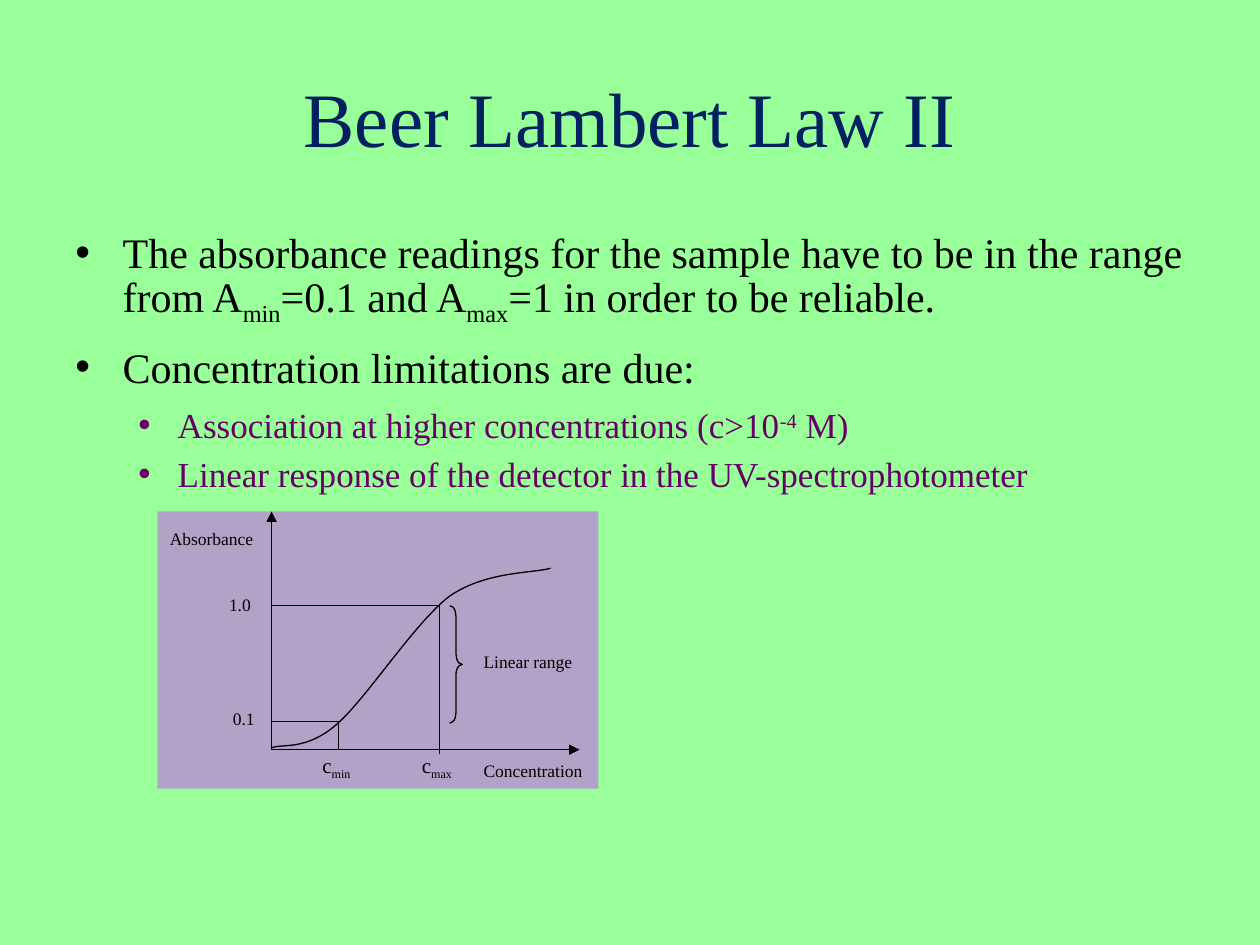
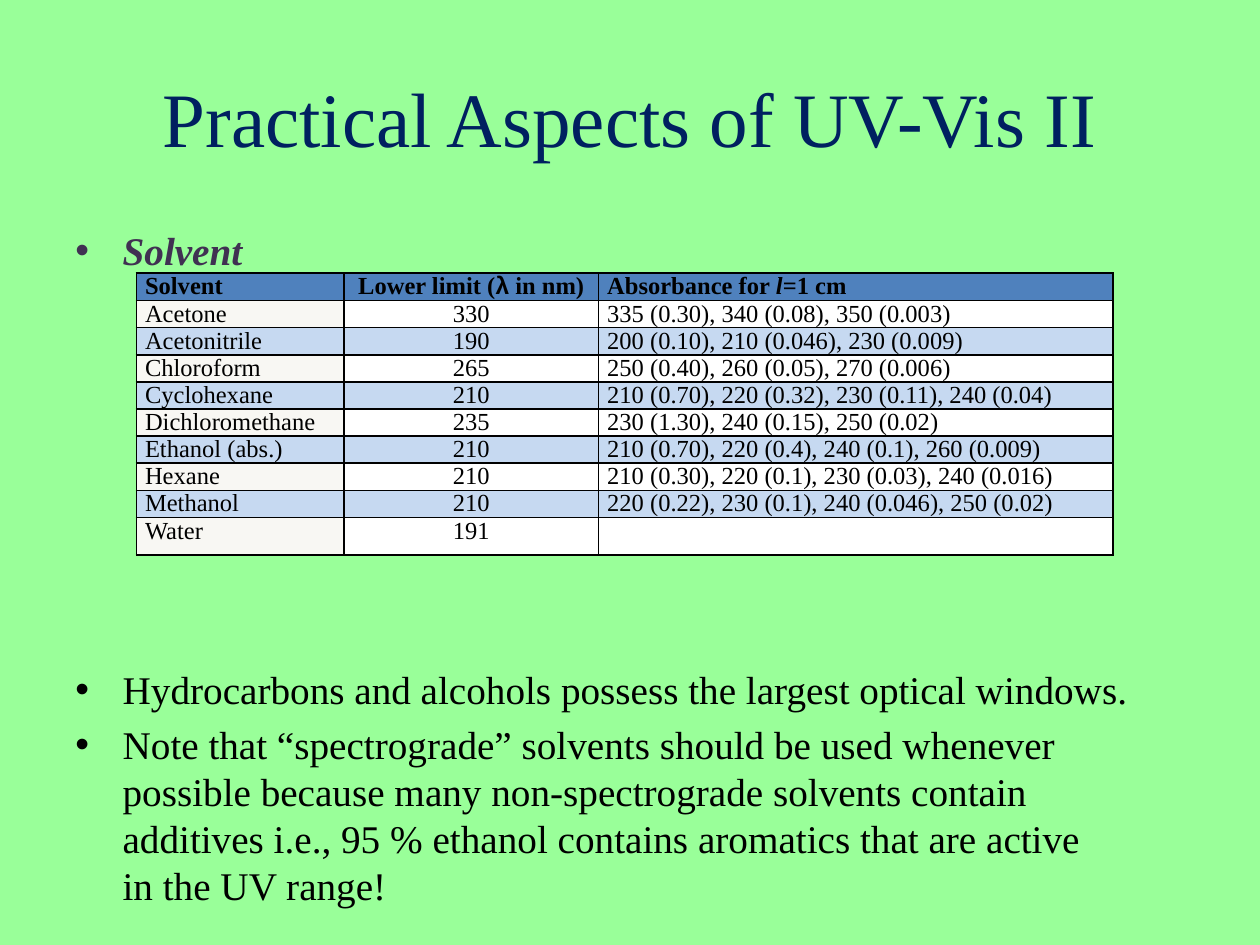
from lxml import etree
from pptx import Presentation
from pptx.dml.color import RGBColor
from pptx.enum.shapes import MSO_CONNECTOR, MSO_SHAPE
from pptx.enum.text import MSO_ANCHOR, PP_ALIGN
from pptx.oxml.ns import qn
from pptx.util import Pt

LEFT, CENTER = PP_ALIGN.LEFT, PP_ALIGN.CENTER
TOP, MIDDLE = MSO_ANCHOR.TOP, MSO_ANCHOR.MIDDLE
STRAIGHT = MSO_CONNECTOR.STRAIGHT
RECTANGLE, RIGHT_BRACE = MSO_SHAPE.RECTANGLE, MSO_SHAPE.RIGHT_BRACE

GREEN = RGBColor(0x99, 0xFF, 0x99)
NAVY = RGBColor(0x00, 0x20, 0x60)
BLACK = RGBColor(0x00, 0x00, 0x00)
PURPLE = RGBColor(0x66, 0x00, 0x66)
DARK_VIOLET = RGBColor(0x40, 0x31, 0x52)
LILAC = RGBColor(0xB3, 0xA2, 0xC7)
HEADER_BLUE = RGBColor(0x4F, 0x81, 0xBD)
BAND_BLUE = RGBColor(0xC6, 0xD9, 0xF1)
OFF_WHITE = RGBColor(0xF8, 0xF7, 0xF3)
WHITE = RGBColor(0xFF, 0xFF, 0xFF)

SERIF = "Times New Roman"
LINE_RATIO = 1.2
LINE_WIDTH = 0.75
TITLE_BOX = (36, 21.6, 648, 90)
BODY_BOX = (36, 126, 648, 356.4)
INDENTS = [(27, -27), (58.5, -22.5)]
SUB, SUP = {"baseline": -25}, {"baseline": 30}

LAW_TITLE = "Beer Lambert Law II"
LAW_POINTS = [
    {"runs": [("The absorbance readings for the sample have to be in the range from A", {}),
              ("min", SUB), ("=0.1 and A", {}), ("max", SUB),
              ("=1 in order to be reliable.", {})], "size": 24},
    {"runs": [("Concentration limitations are due:", {})], "size": 24, "before": 7.8},
    {"runs": [("Association at higher concentrations (c>10", {}), ("-4", SUP), (" M)", {})],
     "size": 20, "color": PURPLE, "level": 1, "before": 6.9},
    {"runs": [("Linear response of the detector in the UV-spectrophotometer", {})],
     "size": 20, "color": PURPLE, "level": 1, "before": 4},
]

GRAPH_PANEL = (90, 292.3, 252, 158.4)
ORIGIN_X, ORIGIN_Y = 155.2, 428.4
C_MIN, C_MAX = 193.4, 251.2
A_MIN, A_MAX = 412.2, 346.1
AXES = [((ORIGIN_X, ORIGIN_Y), (ORIGIN_X, 292.3)), ((ORIGIN_X, ORIGIN_Y), (331.2, ORIGIN_Y))]
GUIDES = [
    ((ORIGIN_X, A_MIN), (C_MIN, A_MIN)),
    ((C_MIN, A_MIN), (C_MIN, ORIGIN_Y)),
    ((C_MAX, A_MAX), (ORIGIN_X, A_MAX)),
    ((C_MAX, A_MAX), (C_MAX, 430.6)),
]
CURVE_START = (154.8, 427.4)
CURVE_SEGMENTS = [
    ((161.3, 424.8), (174.2, 429.1), (191.5, 414.7)),
    ((208.8, 400.3), (236.9, 355.7), (257, 340.6)),
    ((277.9, 326.2), (305.3, 327.6), (314.6, 324.7)),
]
CURVE_STEPS = 24
BRACE_BOX = (257, A_MAX, 7.2, A_MIN - A_MAX + 1)
GRAPH_LABELS = [
    ([("Linear range", {})], 10, (269.3, 368.6, 67.7, 22.3)),
    ([("Concentration", {})], 10, (269.3, 430.6, 72, 19.4)),
    ([("Absorbance", {})], 10, (90, 298.1, 63.4, 19.4)),
    ([("0.1", {})], 10, (126, 401, 27.4, 19.4)),
    ([("1.0", {})], 10, (123.8, 336.2, 27.4, 19.4)),
    ([("c", {}), ("min", SUB)], 12, (177.1, 428.4, 32.4, 21.6)),
    ([("c", {}), ("max", SUB)], 12, (234, 428.4, 33.8, 21.6)),
]

PRACTICE_TITLE = "Practical Aspects of UV-Vis II"
PRACTICE_POINTS = [
    {"runs": [("Solvent", {"bold": True, "italic": True})], "size": 22.4, "color": DARK_VIOLET},
    {"runs": [("Hydrocarbons and alcohols possess the largest optical windows.", {})],
     "size": 22.4, "before": 224},
    {"runs": [("Note that “spectrograde” solvents should be used whenever\n"
               "possible because many non-spectrograde solvents contain\n"
               "additives i.e., 95 % ethanol contains aromatics that are active\n"
               "in the UV range!", {})], "size": 22.4, "before": 4.5},
]
TABLE_LEFT, TABLE_TOP = 77.9, 156
COLUMN_WIDTHS = [118.7, 145.4, 294]
COLUMN_ALIGNMENTS = [LEFT, CENTER, LEFT]
HEADER_HEIGHT, ROW_HEIGHT = 15.84, 15.48
BOLD = {"bold": True}
TABLE_HEADER = [
    [("Solvent", BOLD)],
    [("Lower limit (", BOLD), ("λ", {"bold": True, "name": "Arial"}), (" in nm)", BOLD)],
    [("Absorbance for ", BOLD), ("l", {"bold": True, "italic": True}), ("=1 cm", BOLD)],
]
SOLVENTS = [
    ("Acetone", "330", "335 (0.30), 340 (0.08), 350 (0.003)"),
    ("Acetonitrile", "190", "200 (0.10), 210 (0.046), 230 (0.009)"),
    ("Chloroform", "265", "250 (0.40), 260 (0.05), 270 (0.006)"),
    ("Cyclohexane", "210", "210 (0.70), 220 (0.32), 230 (0.11), 240 (0.04)"),
    ("Dichloromethane", "235", "230 (1.30), 240 (0.15), 250 (0.02)"),
    ("Ethanol (abs.)", "210", "210 (0.70), 220 (0.4), 240 (0.1), 260 (0.009)"),
    ("Hexane", "210", "210 (0.30), 220 (0.1), 230 (0.03), 240 (0.016)"),
    ("Methanol", "210", "220 (0.22), 230 (0.1), 240 (0.046), 250 (0.02)"),
    ("Water", "191", ""),
]


def points(values):
    return [Pt(value) for value in values]


def write_runs(paragraph, runs, size, color=BLACK):
    for text, changes in runs:
        for index, line in enumerate(text.split("\n")):
            if index:
                paragraph.add_line_break()
            run = paragraph.add_run()
            run.text = line
            run.font.color.rgb = color
            formats = {"name": SERIF, "size": Pt(size), **changes}
            baseline = formats.pop("baseline", None)
            for name, value in formats.items():
                setattr(run.font, name, value)
            if baseline:
                run.font._element.set("baseline", str(baseline * 1000))


def format_paragraph(paragraph, size, alignment=LEFT, before=0, ratio=LINE_RATIO):
    formats = {"alignment": alignment, "space_before": Pt(before),
               "line_spacing": Pt(size * ratio)}
    for name, value in formats.items():
        setattr(paragraph, name, value)


def add_bullet(paragraph, level):
    margin, indent = INDENTS[level]
    properties = paragraph._p.get_or_add_pPr()
    properties.set("marL", str(Pt(margin)))
    properties.set("indent", str(Pt(indent)))
    etree.SubElement(properties, qn("a:buFont")).set("typeface", "Arial")
    etree.SubElement(properties, qn("a:buChar")).set("char", "•")


def add_text_frame(slide, box, anchor=TOP, wrap=True):
    frame = slide.shapes.add_textbox(*points(box)).text_frame
    frame.word_wrap = wrap
    frame.vertical_anchor = anchor
    return frame


def add_label(slide, runs, size, box):
    paragraph = add_text_frame(slide, box, wrap=False).paragraphs[0]
    format_paragraph(paragraph, size)
    write_runs(paragraph, runs, size)


def add_content_slide(presentation, title, bullet_points):
    slide = presentation.slides.add_slide(presentation.slide_layouts[6])
    slide.background.fill.solid()
    slide.background.fill.fore_color.rgb = GREEN
    heading = add_text_frame(slide, TITLE_BOX, MIDDLE).paragraphs[0]
    format_paragraph(heading, 44, CENTER)
    write_runs(heading, [(title, {})], 44, NAVY)
    frame = add_text_frame(slide, BODY_BOX)
    for index, point in enumerate(bullet_points):
        paragraph = frame.add_paragraph() if index else frame.paragraphs[0]
        format_paragraph(paragraph, point["size"], before=point.get("before", 0))
        add_bullet(paragraph, point.get("level", 0))
        write_runs(paragraph, point["runs"], point["size"], point.get("color", BLACK))
    return slide


def style_line(shape):
    shape.line.color.rgb = BLACK
    shape.line.width = Pt(LINE_WIDTH)


def style_outline(shape):
    shape.shadow.inherit = False
    shape.fill.background()
    style_line(shape)


def add_line(slide, start, end, arrow=False):
    connector = slide.shapes.add_connector(STRAIGHT, *points(start + end))
    style_line(connector)
    if arrow:
        etree.SubElement(connector.line._get_or_add_ln(), qn("a:tailEnd")).set("type", "triangle")
    etree.SubElement(connector._element.spPr, qn("a:effectLst"))


def bezier_points(start, segment):
    controls = (start,) + segment
    for step in range(1, CURVE_STEPS + 1):
        t = step / CURVE_STEPS
        weights = ((1 - t) ** 3, 3 * t * (1 - t) ** 2, 3 * t ** 2 * (1 - t), t ** 3)
        yield tuple(Pt(sum(w * control[axis] for w, control in zip(weights, controls)))
                    for axis in (0, 1))


def add_absorbance_graph(slide):
    panel = slide.shapes.add_shape(RECTANGLE, *points(GRAPH_PANEL))
    panel.shadow.inherit = False
    panel.fill.solid()
    panel.fill.fore_color.rgb = LILAC
    panel.line.fill.background()
    for start, end in AXES:
        add_line(slide, start, end, arrow=True)
    for start, end in GUIDES:
        add_line(slide, start, end)
    builder = slide.shapes.build_freeform(*points(CURVE_START))
    start = CURVE_START
    for segment in CURVE_SEGMENTS:
        builder.add_line_segments(bezier_points(start, segment), close=False)
        start = segment[-1]
    style_outline(builder.convert_to_shape())
    brace = slide.shapes.add_shape(RIGHT_BRACE, *points(BRACE_BOX))
    brace.adjustments[0] = 0.82
    brace.adjustments[1] = 0.5
    style_outline(brace)
    for runs, size, box in GRAPH_LABELS:
        add_label(slide, runs, size, box)


def add_borders(cell):
    properties = cell._tc.get_or_add_tcPr()
    for index, side in enumerate(("a:lnL", "a:lnR", "a:lnT", "a:lnB")):
        border = etree.Element(qn(side), w=str(Pt(1)))
        fill = etree.SubElement(border, qn("a:solidFill"))
        etree.SubElement(fill, qn("a:srgbClr")).set("val", str(BLACK))
        properties.insert(index, border)


def cell_fill(row, column):
    if row == 0:
        return HEADER_BLUE
    if row % 2 == 0:
        return BAND_BLUE
    return WHITE if column else OFF_WHITE


def add_solvent_table(slide):
    rows = [TABLE_HEADER] + [[[(text, {})] for text in solvent] for solvent in SOLVENTS]
    heights = [HEADER_HEIGHT] + [ROW_HEIGHT] * len(SOLVENTS)
    box = (TABLE_LEFT, TABLE_TOP, sum(COLUMN_WIDTHS), sum(heights))
    table = slide.shapes.add_table(len(rows), len(COLUMN_WIDTHS), *points(box)).table
    table.first_row = table.horz_banding = False
    for column, width in zip(table.columns, COLUMN_WIDTHS):
        column.width = Pt(width)
    for row_index, (runs_of_row, height) in enumerate(zip(rows, heights)):
        table.rows[row_index].height = Pt(height)
        for column_index, runs in enumerate(runs_of_row):
            cell = table.cell(row_index, column_index)
            formats = {"margin_left": Pt(5), "margin_right": Pt(5),
                       "margin_top": 0, "margin_bottom": 0}
            for name, value in formats.items():
                setattr(cell, name, value)
            cell.fill.solid()
            cell.fill.fore_color.rgb = cell_fill(row_index, column_index)
            add_borders(cell)
            paragraph = cell.text_frame.paragraphs[0]
            format_paragraph(paragraph, 14, COLUMN_ALIGNMENTS[column_index], ratio=1.1)
            write_runs(paragraph, runs, 14)


def main():
    presentation = Presentation()
    presentation.slide_width = Pt(720)
    presentation.slide_height = Pt(540)
    add_absorbance_graph(add_content_slide(presentation, LAW_TITLE, LAW_POINTS))
    add_solvent_table(add_content_slide(presentation, PRACTICE_TITLE, PRACTICE_POINTS))
    presentation.save("out.pptx")


if __name__ == "__main__":
    main()
